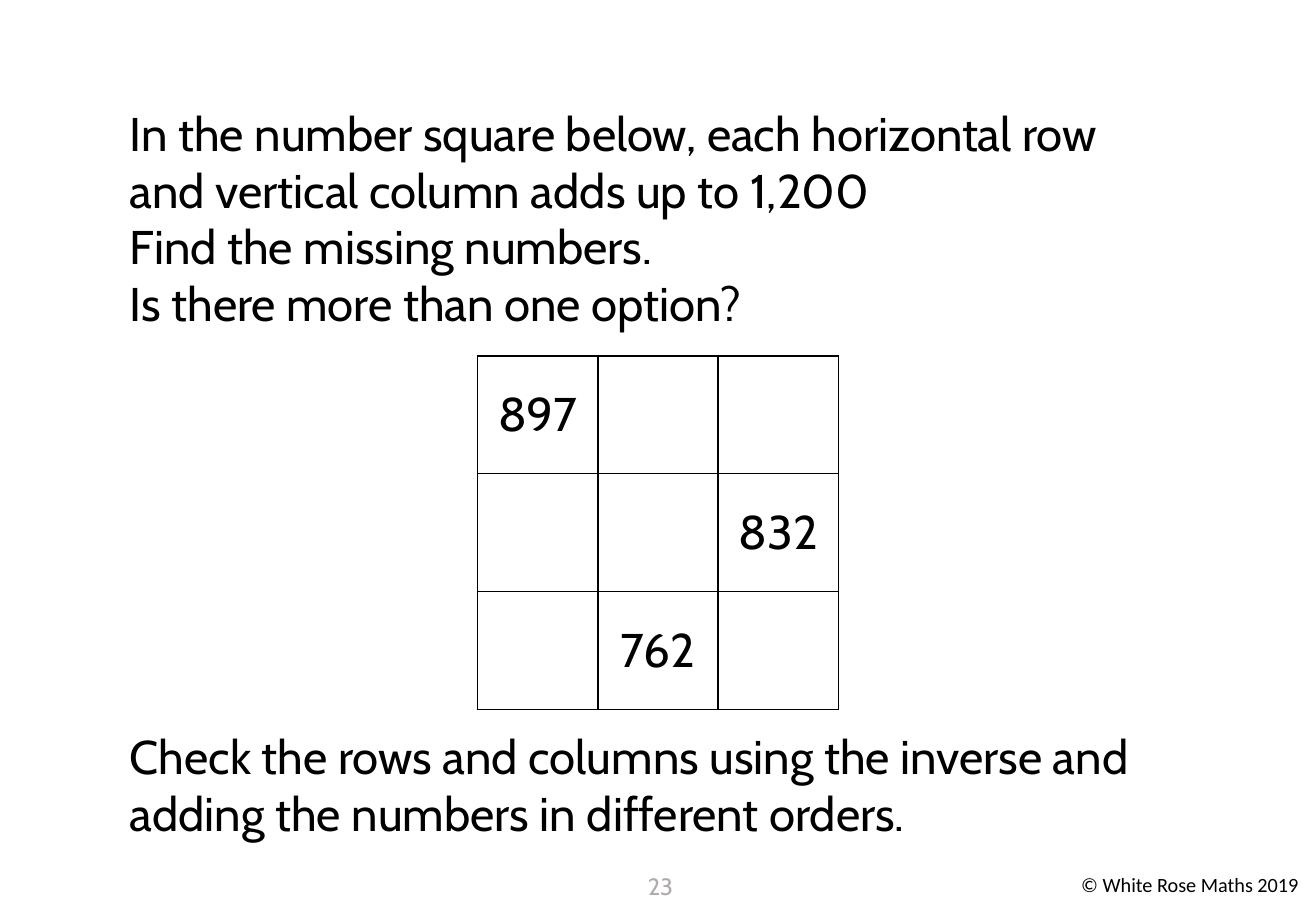
from lxml.etree import SubElement
from pptx import Presentation
from pptx.dml.color import RGBColor
from pptx.enum.text import MSO_ANCHOR, PP_ALIGN
from pptx.oxml.ns import qn
from pptx.util import Inches, Pt

COLORS = {"text": "000000", "grid": "000000", "page": "AFABAB"}


def write(paragraph, text, size=28, font="Cabin", color="text", align=PP_ALIGN.LEFT):
    paragraph.alignment = align
    run = paragraph.add_run()
    run.text = text
    run.font.size = Pt(size)
    run.font.name = font
    run.font.color.rgb = RGBColor.from_string(COLORS[color])


def add_border(cell, side):
    line = SubElement(cell._tc.get_or_add_tcPr(), qn(f"a:{side}"), w=str(Pt(1)))
    fill = SubElement(line, qn("a:solidFill"))
    SubElement(fill, qn("a:srgbClr"), val=COLORS["grid"])


presentation = Presentation()
presentation.slide_width = Inches(10.83)
presentation.slide_height = Inches(7.5)
slide = presentation.slides.add_slide(presentation.slide_layouts[6])

question = [
    "In the number square below, each horizontal row and vertical column adds up to 1,200",
    "Find the missing numbers.",
    "Is there more than one option?",
]
check = ["Check the rows and columns using the inverse and adding the numbers in different orders."]
page = {"size": 14, "color": "page", "align": PP_ALIGN.CENTER}
credit = {"size": 12, "font": "Calibri"}

text_boxes = [
    (8.8, 7.13, 2.03, 0.3, ["© White Rose Maths 2019"], credit),
    (5.18, 7.13, 0.51, 0.37, ["23"], page),
    (0.97, 0.81, 8.81, 1.97, question, {}),
    (0.97, 5.94, 8.81, 1.04, check, {}),
]
for left, top, width, height, lines, style in text_boxes:
    box = slide.shapes.add_textbox(Inches(left), Inches(top), Inches(width), Inches(height))
    frame = box.text_frame
    frame.word_wrap = True
    for index, line in enumerate(lines):
        paragraph = frame.add_paragraph() if index else frame.paragraphs[0]
        write(paragraph, line, **style)

numbers = [["897", "", ""], ["", "", "832"], ["", "762", ""]]
square = slide.shapes.add_table(
    3, 3, Inches(3.93), Inches(2.93), Inches(2.97), Inches(2.9)
).table
square.first_row = False
square.horz_banding = False
for column in square.columns:
    column.width = Inches(0.99)
for row, values in zip(square.rows, numbers):
    row.height = Inches(0.97)
    for cell, number in zip(row.cells, values):
        cell.vertical_anchor = MSO_ANCHOR.MIDDLE
        for side in ("lnL", "lnR", "lnT", "lnB"):
            add_border(cell, side)
        cell.fill.background()
        if number:
            write(cell.text_frame.paragraphs[0], number, align=PP_ALIGN.CENTER)

presentation.save("out.pptx")
